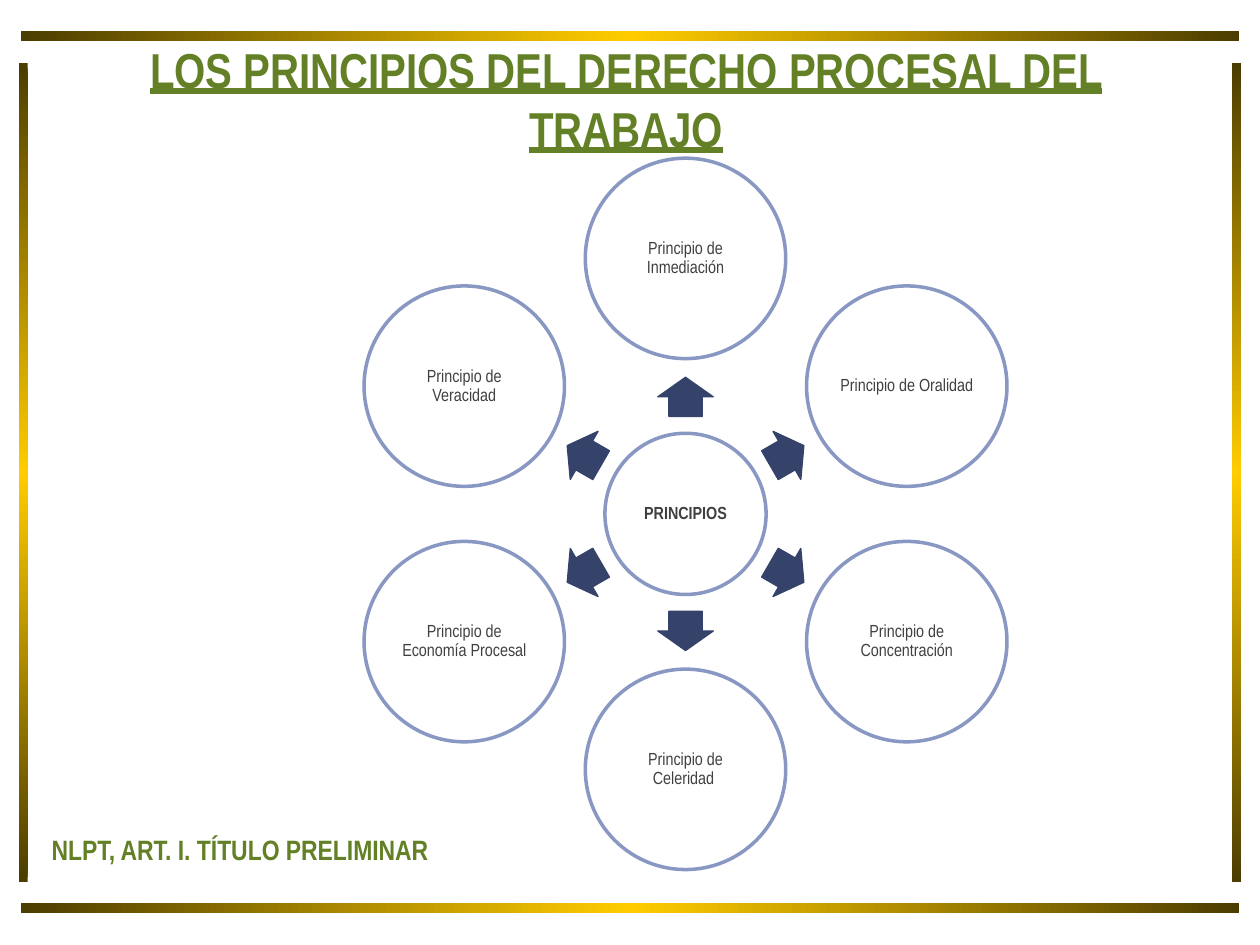
from copy import deepcopy
from math import cos, radians, sin

from pptx import Presentation
from pptx.dml.color import RGBColor
from pptx.enum.shapes import MSO_SHAPE
from pptx.enum.text import MSO_ANCHOR, PP_ALIGN
from pptx.oxml.ns import qn
from pptx.util import Cm, Pt

RECTANGLE, OVAL, ARROW = MSO_SHAPE.RECTANGLE, MSO_SHAPE.OVAL, MSO_SHAPE.RIGHT_ARROW
CENTER, MIDDLE = PP_ALIGN.CENTER, MSO_ANCHOR.MIDDLE
FONT = "Arial Narrow"
COLORS = {
    "bronze": "4C3D00", "gold": "FFCC00", "green": "638026",
    "ring": "8898C3", "arrow": "35436A", "text": "404040",
}
HUB_X, HUB_Y = 13.82, 10.36
HUB_SIZE, PRINCIPLE_SIZE = 3.25, 4.04
ORBIT, ARROW_ORBIT = 5.15, 2.36
ARROW_LENGTH, ARROW_WIDTH = 0.79, 1.12
PRINCIPLES = [
    "Principio de Inmediación", "Principio de Oralidad",
    "Principio de Concentración", "Principio de Celeridad ",
    "Principio de Economía Procesal", "Principio de Veracidad",
]


def color(name):
    """Return the named palette colour."""
    return RGBColor.from_string(COLORS[name])


def add_bar(slide, left, top, width, height):
    """Add a frame bar that shades along its length from bronze to gold and back."""
    shape = slide.shapes.add_shape(RECTANGLE, Cm(left), Cm(top), Cm(width), Cm(height))
    shape.shadow.inherit = False
    shape.line.fill.background()
    shape.fill.gradient()
    shape.fill.gradient_angle = 0 if width > height else 90
    first_stop = shape._element.spPr.find(".//" + qn("a:gs"))
    first_stop.addnext(deepcopy(first_stop))
    stops = zip(shape.fill.gradient_stops, (0, 0.5, 1), ("bronze", "gold", "bronze"))
    for stop, position, name in stops:
        stop.position = position
        stop.color.rgb = color(name)


def write(shape, text, size, name, bold=False):
    """Put one styled paragraph in a shape and return it."""
    shape.text_frame.word_wrap = True
    paragraph = shape.text_frame.paragraphs[0]
    paragraph.text = text
    font = paragraph.font
    font.name, font.size, font.bold = FONT, Pt(size), bold
    font.color.rgb = color(name)
    return paragraph


def add_heading(slide, text, left, top, width, height, size):
    """Add a bold green text box and return it."""
    box = slide.shapes.add_textbox(Cm(left), Cm(top), Cm(width), Cm(height))
    write(box, text, size, "green", bold=True)
    return box


def add_centered(slide, kind, x, y, width, height):
    """Add a shape placed by its centre."""
    shape = slide.shapes.add_shape(
        kind, Cm(x - width / 2), Cm(y - height / 2), Cm(width), Cm(height))
    shape.shadow.inherit = False
    return shape


def add_circle(slide, text, x, y, diameter, bold=False):
    """Add an outlined circle with a centred label."""
    circle = add_centered(slide, OVAL, x, y, diameter, diameter)
    circle.fill.background()
    circle.line.color.rgb = color("ring")
    circle.line.width = Pt(2)
    frame = circle.text_frame
    frame.margin_left = frame.margin_right = Cm(0.03)
    frame.margin_top = frame.margin_bottom = Cm(0.03)
    frame.vertical_anchor = MIDDLE
    paragraph = write(circle, text, 10, "text", bold)
    paragraph.alignment = CENTER
    paragraph.line_spacing = 0.9


def add_arrow(slide, x, y, angle):
    """Add a block arrow turned to the given angle."""
    arrow = add_centered(slide, ARROW, x, y, ARROW_LENGTH, ARROW_WIDTH)
    arrow.rotation = angle % 360
    arrow.adjustments[0], arrow.adjustments[1] = 0.6, 0.5
    arrow.fill.solid()
    arrow.fill.fore_color.rgb = color("arrow")
    arrow.line.color.rgb = color("arrow")
    arrow.line.width = Pt(0.75)


def add_wheel(slide):
    """Add the hub with the principles spaced evenly around it."""
    add_circle(slide, "PRINCIPIOS", HUB_X, HUB_Y, HUB_SIZE, bold=True)
    for index, principle in enumerate(PRINCIPLES):
        angle = index * 360 / len(PRINCIPLES) - 90
        across, down = cos(radians(angle)), sin(radians(angle))
        add_arrow(slide, HUB_X + ARROW_ORBIT * across, HUB_Y + ARROW_ORBIT * down, angle)
        add_circle(slide, principle, HUB_X + ORBIT * across, HUB_Y + ORBIT * down,
                   PRINCIPLE_SIZE)


def main():
    """Build and save the slide."""
    presentation = Presentation()
    presentation.slide_width, presentation.slide_height = Cm(25.4), Cm(19.05)
    slide = presentation.slides.add_slide(presentation.slide_layouts[6])
    for top in (0.63, 18.21):
        add_bar(slide, 0.42, top, 24.56, 0.2)
    for left in (0.38, 24.84):
        add_bar(slide, left, 1.27, 0.18, 16.51)
    title = add_heading(slide, "LOS PRINCIPIOS DEL DERECHO PROCESAL DEL TRABAJO",
                        1.19, 0.99, 22.86, 1.98, 28)
    title.text_frame.vertical_anchor = MIDDLE
    title.text_frame.paragraphs[0].alignment = CENTER
    title.text_frame.paragraphs[0].font.underline = True
    add_wheel(slide)
    add_heading(slide, "NLPT, ART. I. TÍTULO PRELIMINAR", 0.79, 16.66, 8.94, 1.19, 16)
    presentation.save("out.pptx")


if __name__ == "__main__":
    main()
